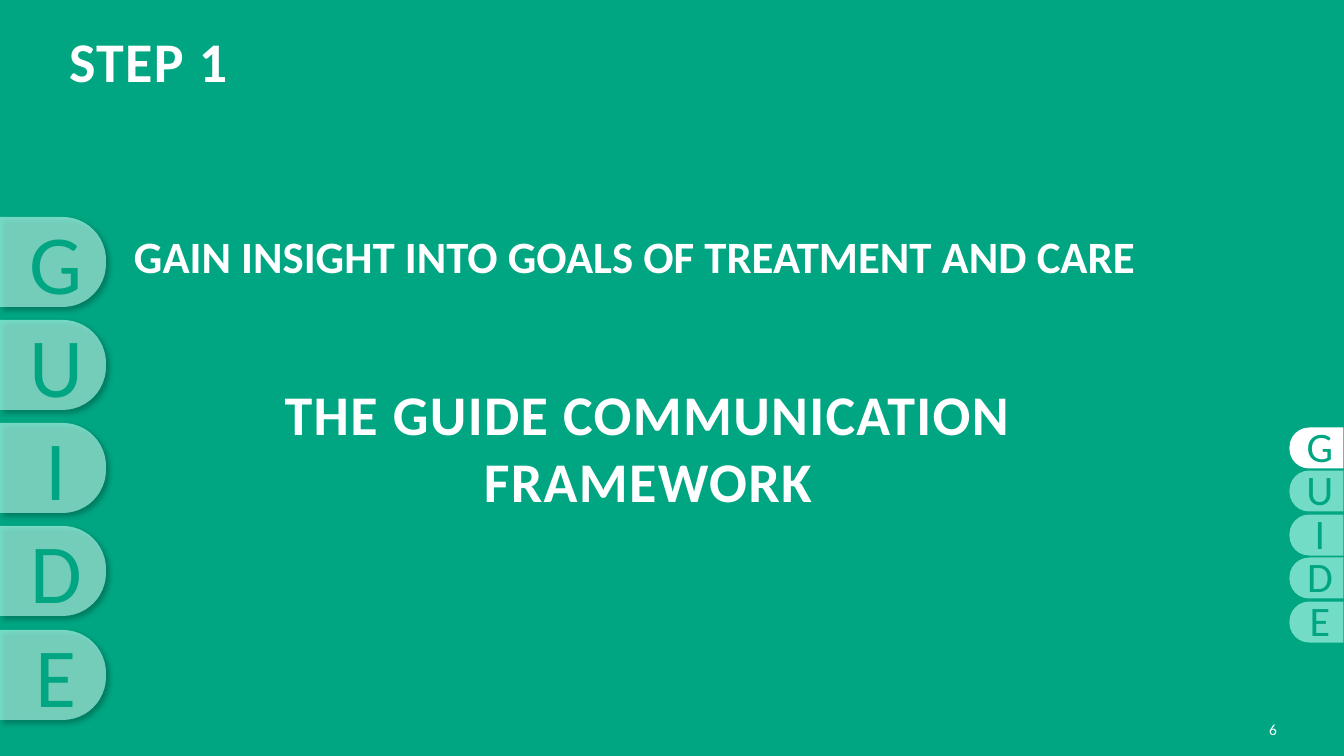
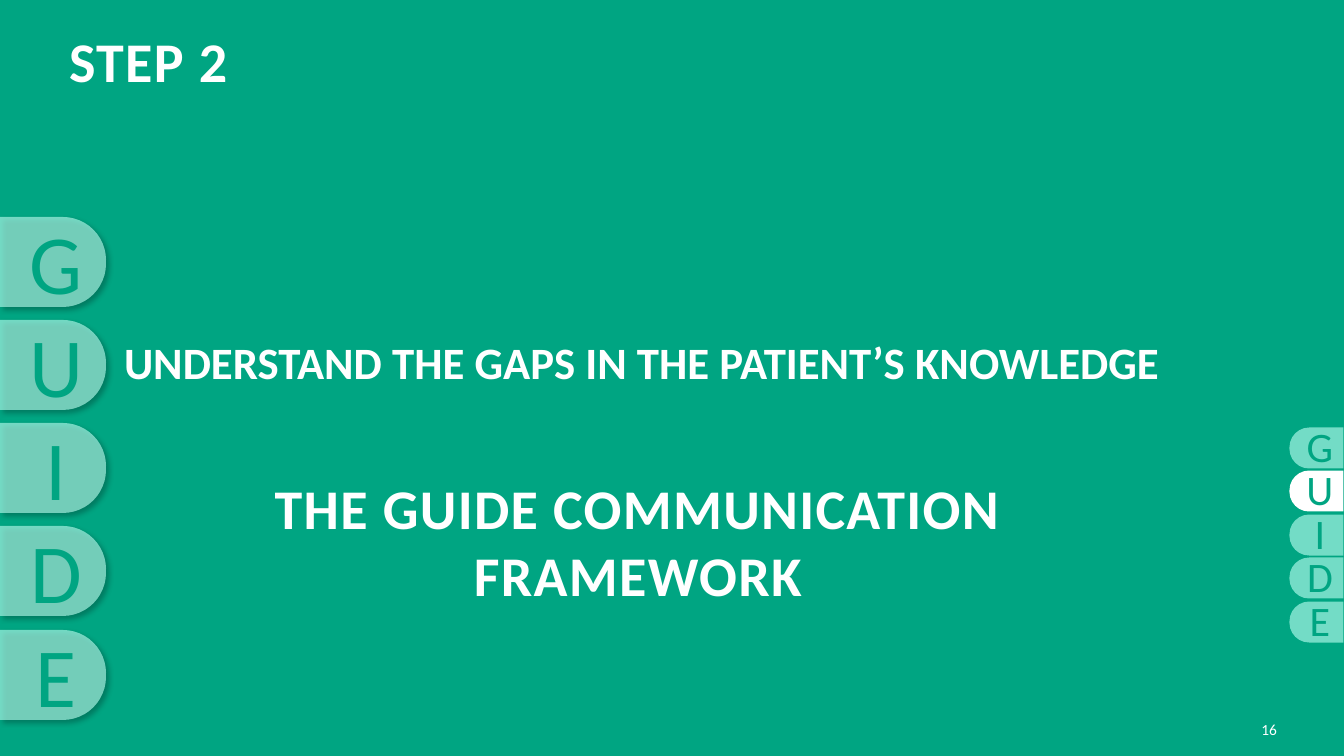
from pptx import Presentation
from pptx.dml.color import RGBColor
from pptx.enum.shapes import MSO_SHAPE
from pptx.enum.text import MSO_ANCHOR, MSO_AUTO_SIZE, PP_ALIGN
from pptx.oxml.ns import qn
from pptx.oxml.xmlchemy import OxmlElement
from pptx.util import Pt

TAB_SHAPE = MSO_SHAPE.ROUND_2_SAME_RECTANGLE
TOP, MIDDLE = MSO_ANCHOR.TOP, MSO_ANCHOR.MIDDLE
LEFT, CENTER, RIGHT = PP_ALIGN.LEFT, PP_ALIGN.CENTER, PP_ALIGN.RIGHT
NO_AUTOFIT = MSO_AUTO_SIZE.NONE

GREEN = RGBColor(0x00, 0xA5, 0x82)
MINT = RGBColor(0xBA, 0xFF, 0xF0)
WHITE = RGBColor(0xFF, 0xFF, 0xFF)
BLACK = RGBColor(0x00, 0x00, 0x00)

FONT = "Calibri"
SLIDE_W, SLIDE_H = 1344, 756
LETTERS = "GUIDE"
TITLE_LINES = ["THE GUIDE COMMUNICATION", "FRAMEWORK"]
TITLE_SIZE = (1210, 259)

STEPS = [
    {"number": 1, "page": 6, "title_at": (43, 317),
     "goal": "GAIN INSIGHT INTO GOALS OF TREATMENT AND CARE",
     "goal_box": (134, 230, 1050, 59)},
    {"number": 2, "page": 16, "title_at": (33, 411),
     "goal": "UNDERSTAND THE GAPS IN THE PATIENT’S KNOWLEDGE",
     "goal_box": (124, 336, 1096, 59)},
]


def px(length):
    """Turn px into EMU."""
    return round(length * 12192000 / SLIDE_W)


def child(parent, tag, **attributes):
    """Append an XML element with the given attributes."""
    element = OxmlElement(tag)
    for key, value in attributes.items():
        element.set(key, str(value))
    parent.append(element)
    return element


def write(frame, lines, size, color, align=LEFT, anchor=TOP, bold=False,
          spacing=0, line_height=None, insets=(0, 0, 0, 0)):
    """Fill a text frame with one paragraph of lines."""
    frame.word_wrap = True
    frame.auto_size = NO_AUTOFIT
    frame.vertical_anchor = anchor
    (frame.margin_left, frame.margin_top,
     frame.margin_right, frame.margin_bottom) = map(px, insets)
    paragraph = frame.paragraphs[0]
    paragraph.alignment = align
    if line_height:
        paragraph.line_spacing = line_height
    for index, line in enumerate(lines):
        if index:
            paragraph.add_line_break()
        run = paragraph.add_run()
        run.text = line
        run.font.name = FONT
        run.font.size = Pt(size)
        run.font.bold = bold
        run.font.color.rgb = color
        if spacing:
            run.font._element.set("spc", str(spacing * 100))


def add_text(slide, box, text, size, color, **style):
    """Add a text box with one line of text."""
    label = slide.shapes.add_textbox(*map(px, box))
    write(label.text_frame, [text], size, color, **style)


def add_shadow(tab):
    """Cast a soft shadow down and to the right."""
    effects = tab._element.spPr.find(qn("a:effectLst"))
    shadow = child(effects, "a:outerShdw", blurRad=Pt(4), dist=Pt(3),
                   dir=45 * 60000, algn="tl", rotWithShape=0)
    color = child(shadow, "a:srgbClr", val=BLACK)
    child(color, "a:alpha", val=40000)


def add_tab(slide, left, top, width, height, rotation, color, opacity=100):
    """Add a tab, rounded on one side, that covers the given area."""
    shift = (width - height) // 2
    tab = slide.shapes.add_shape(TAB_SHAPE, px(left + shift), px(top - shift),
                                 px(height), px(width))
    tab.rotation = rotation
    tab.adjustments[0] = 0.48
    tab.adjustments[1] = 0
    tab.shadow.inherit = False
    tab.line.fill.background()
    tab.fill.solid()
    tab.fill.fore_color.rgb = color
    if opacity < 100:
        fill_color = tab._element.spPr.find(qn("a:solidFill"))[0]
        child(fill_color, "a:alpha", val=opacity * 1000)
    return tab


def spread(first, last):
    """Pair each letter with its top, evenly spaced."""
    gaps = len(LETTERS) - 1
    return [(letter, first + (last - first) * index // gaps)
            for index, letter in enumerate(LETTERS)]


def add_large_tabs(slide):
    """Add the large letter tabs at the left edge."""
    for letter, top in spread(217, 630):
        add_shadow(add_tab(slide, 0, top, 106, 90, 90, MINT, 62))
        add_text(slide, (0, top - 12, 112, 112), letter, 60, GREEN,
                 align=CENTER, anchor=MIDDLE)


def add_step_tabs(slide, active):
    """Add the small letter tabs at the right edge, the active one white."""
    for letter, top in spread(427, 601):
        color, opacity = (WHITE, 100) if letter == active else (MINT, 62)
        add_tab(slide, 1290, top, 54, 41, 270, color, opacity)
        add_text(slide, (1300, top - 6, 40, 50), letter, 30, GREEN,
                 align=CENTER)


def add_step_slide(deck, step):
    """Add the opening slide of one step."""
    slide = deck.slides.add_slide(deck.slide_layouts[5])
    title = slide.shapes.title
    title.left, title.top = map(px, step["title_at"])
    title.width, title.height = map(px, TITLE_SIZE)
    write(title.text_frame, TITLE_LINES, 40, WHITE, align=CENTER,
          anchor=MIDDLE, bold=True, spacing=1)
    add_text(slide, (69, 27, 964, 89), f"STEP {step['number']}", 40, WHITE,
             bold=True, spacing=1)
    add_text(slide, step["goal_box"], step["goal"], 32, WHITE, bold=True,
             line_height=0.9, insets=(0, 5, 10, 5))
    add_large_tabs(slide)
    add_step_tabs(slide, LETTERS[step["number"] - 1])
    add_text(slide, (1190, 709, 87, 40), str(step["page"]), 11, WHITE,
             align=RIGHT, anchor=MIDDLE)


def main():
    """Build the deck and save it."""
    deck = Presentation()
    deck.slide_width, deck.slide_height = px(SLIDE_W), px(SLIDE_H)
    background = deck.slide_master.background.fill
    background.solid()
    background.fore_color.rgb = GREEN
    for step in STEPS:
        add_step_slide(deck, step)
    deck.save("out.pptx")


if __name__ == "__main__":
    main()
